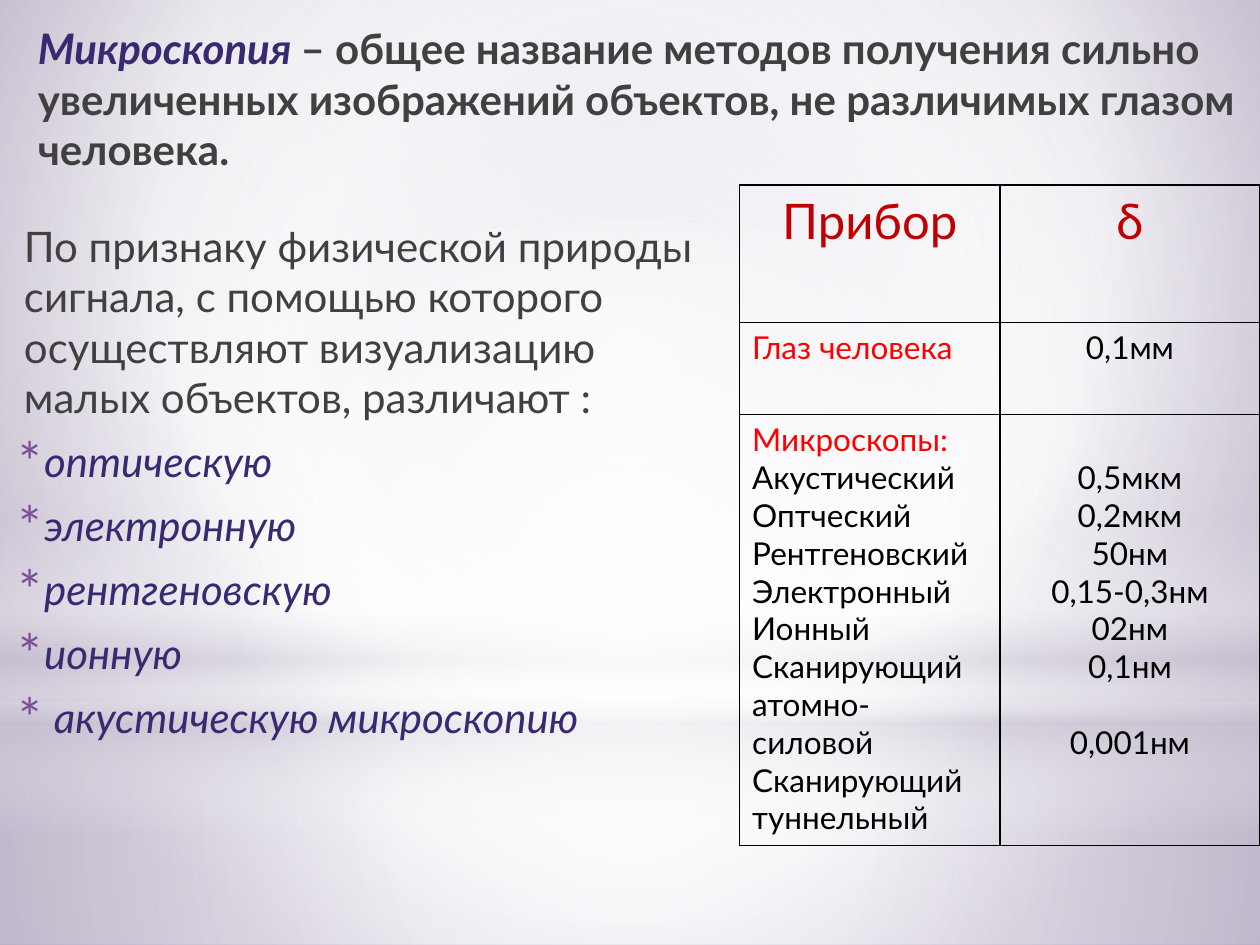
from dataclasses import dataclass

from lxml.etree import SubElement
from pptx import Presentation
from pptx.dml.color import RGBColor
from pptx.enum.shapes import MSO_SHAPE
from pptx.enum.text import MSO_ANCHOR, MSO_AUTO_SIZE, PP_ALIGN
from pptx.oxml.ns import qn
from pptx.util import Inches, Pt


@dataclass(frozen=True)
class Theme:
    """Colours, font and type sizes of the slide."""
    font: str = "Lato"
    text: str = "404040"
    accent: str = "382971"
    bullet: str = "7E4E99"
    header: str = "C00000"
    label: str = "FF0000"
    black: str = "000000"
    white: str = "FFFFFF"
    haze: str = "C9C2D1"
    edge: str = "C1B7CD"
    deep: str = "A191B5"
    main: int = 24
    head: int = 28
    cell: int = 18


T = Theme()
CENTRE = (50, 50, 50, 50)
INSTRUMENTS = ["Акустический", "Оптческий", "Рентгеновский", "Электронный", "Ионный",
               "Сканирующий атомно-силовой", "Сканирующий туннельный"]
LIMITS = ["0,5мкм", "0,2мкм", "50нм", "0,15-0,3нм", "02нм", "0,1нм", "0,001нм"]
KINDS = ["оптическую", "электронную", "рентгеновскую", "ионную", " акустическую микроскопию"]


def inches(box):
    """Turn a box of plain numbers into lengths."""
    return [Inches(v) for v in box]


def add_element(parent, tag, **attrs):
    """Append a drawing element with the given attributes."""
    return SubElement(parent, qn(tag), {k: str(v) for k, v in attrs.items()})


def set_gradient(props, stops, centre=None):
    """Replace a solid fill by a radial gradient, or a vertical one without a centre."""
    solid = props.find(qn("a:solidFill"))
    grad = props.makeelement(qn("a:gradFill"), {"rotWithShape": "1"})
    stop_list = add_element(grad, "a:gsLst")
    for pos, color, alpha in stops:
        gs = add_element(stop_list, "a:gs", pos=pos * 1000)
        clr = add_element(gs, "a:srgbClr", val=color)
        if alpha < 100:
            add_element(clr, "a:alpha", val=alpha * 1000)
    if centre:
        path = add_element(grad, "a:path", path="circle")
        add_element(path, "a:fillToRect",
                    **{side: v * 1000 for side, v in zip("ltrb", centre)})
    else:
        add_element(grad, "a:lin", ang=90 * 60000, scaled=0)
    props.replace(solid, grad)


def add_run(p, text, size, color, bold=False, italic=False):
    """Add one formatted run to a paragraph."""
    r = p.add_run()
    r.text = text
    r.font.name, r.font.size = T.font, Pt(size)
    r.font.bold, r.font.italic = bold, italic
    r.font.color.rgb = RGBColor.from_string(color)


def next_paragraph(tf, index):
    """Return the first paragraph for index zero, otherwise a new one."""
    return tf.add_paragraph() if index else tf.paragraphs[0]


def place_placeholder(sp, box):
    """Move a placeholder to its box, bring it forward and return its text frame."""
    sp.left, sp.top, sp.width, sp.height = inches(box)
    sp.element.getparent().append(sp.element)
    tf = sp.text_frame
    tf.word_wrap = True
    tf.auto_size = MSO_AUTO_SIZE.NONE
    tf.vertical_anchor = MSO_ANCHOR.TOP
    return tf


def add_glow(s, kind, box, stops, centre=None):
    """Add one borderless gradient shape."""
    sp = s.shapes.add_shape(kind, *inches(box))
    sp.shadow.inherit = False
    sp.line.fill.background()
    sp.fill.solid()
    set_gradient(sp.element.spPr, stops, centre)


def add_backdrop(s, box):
    """Paint the background and its layers of light."""
    left, top, width, height = box
    horizon = top + 5.58
    s.background.fill.solid()
    set_gradient(s.element.find(".//" + qn("p:bgPr")),
                 [(0, T.edge, 100), (60, T.white, 100), (100, T.deep, 100)],
                 (20, 10, 20, 60))
    add_glow(s, MSO_SHAPE.RECTANGLE, (left, horizon, width, top + height - horizon),
             [(0, T.white, 91), (37, T.white, 76), (100, T.haze, 79)], CENTRE)
    add_glow(s, MSO_SHAPE.RECTANGLE, (left, top, width, horizon - top),
             [(0, T.white, 89), (48, T.white, 62), (100, T.haze, 79)], CENTRE)
    add_glow(s, MSO_SHAPE.RECTANGLE, (left, top + 4.12, width, 2.5),
             [(0, T.white, 0), (29, T.white, 30), (45, T.haze, 40),
              (55, T.white, 26), (65, T.haze, 60), (100, T.white, 0)])
    add_glow(s, MSO_SHAPE.OVAL, (left, top + 1.75, width, 5.58),
             [(0, T.white, 100), (56, T.white, 0)], CENTRE)


def fill_title(s, box):
    """Write the definition in the title placeholder."""
    p = place_placeholder(s.shapes.title, box).paragraphs[0]
    p.alignment = PP_ALIGN.LEFT
    add_run(p, "Микроскопия ", T.main, T.accent, True, True)
    add_run(p, "– общее название методов получения сильно увеличенных изображений "
               "объектов, не различимых глазом человека.", T.main, T.text, True)


def format_item(p, margin, indent, bullet):
    """Set spacing, indents and the bullet of a body paragraph."""
    p.space_before, p.space_after = Pt(4.8), Pt(3)
    props = p._p.get_or_add_pPr()
    props.set("marL", str(Inches(margin)))
    props.set("indent", str(Inches(indent)))
    if not bullet:
        add_element(props, "a:buNone")
        return
    add_element(add_element(props, "a:buClr"), "a:srgbClr", val=T.bullet)
    add_element(props, "a:buSzPct", val=130000)
    add_element(props, "a:buFont", typeface=T.font)
    add_element(props, "a:buChar", char=bullet)


def fill_body(s, box):
    """Write the introduction and the list of kinds in the body placeholder."""
    tf = place_placeholder(s.placeholders[1], box)
    p = tf.paragraphs[0]
    format_item(p, 0.09, 0, None)
    add_run(p, "По признаку физической природы сигнала, с помощью которого осуществляют "
               "визуализацию малых объектов, различают :", T.main, T.text)
    for kind in KINDS:
        p = tf.add_paragraph()
        format_item(p, 0.25, -0.2, "*")
        add_run(p, kind, T.main, T.accent, italic=True)


def fill_cell(cell, lines, size, align):
    """Write coloured lines in a bordered, unfilled cell."""
    props = cell._tc.get_or_add_tcPr()
    for side in ("L", "R", "T", "B"):
        ln = add_element(props, "a:ln" + side, w=Pt(1))
        add_element(add_element(ln, "a:solidFill"), "a:srgbClr", val=T.black)
    cell.fill.background()
    for i, (text, color) in enumerate(lines):
        p = next_paragraph(cell.text_frame, i)
        p.alignment = align
        add_run(p, text, size, color)


def add_resolution_table(s, box):
    """Add the table of instruments and their resolution limits."""
    table = s.shapes.add_table(3, 2, *inches(box)).table
    table.first_row = table.horz_banding = False
    for col in table.columns:
        col.width = Inches(box[2] / 2)
    for row, height in zip(table.rows, (1.09, 0.73, 3.42)):
        row.height = Inches(height)
    names = [("Микроскопы:", T.label)] + [(name, T.black) for name in INSTRUMENTS]
    rows = [
        (T.head, PP_ALIGN.CENTER, [("Прибор", T.header)], [("δ", T.header)]),
        (T.cell, PP_ALIGN.LEFT, [("Глаз человека", T.label)], [("0,1мм", T.black)]),
        (T.cell, PP_ALIGN.LEFT, names, [(limit, T.black) for limit in LIMITS]),
    ]
    for i, (size, align, left, right) in enumerate(rows):
        fill_cell(table.cell(i, 0), left, size, align)
        fill_cell(table.cell(i, 1), right, size, PP_ALIGN.CENTER)
    limits = table.cell(2, 1)
    limits.margin_top = Inches(0.35)
    limits.text_frame.paragraphs[-1].space_before = Pt(1.2 * T.cell)


def main():
    """Build and save the slide."""
    prs = Presentation()
    prs.slide_width, prs.slide_height = Inches(10), Inches(7.5)
    s = prs.slides.add_slide(prs.slide_layouts[1])
    add_backdrop(s, (0, 0, 10, 7.5))
    fill_title(s, (0.2, 0.13, 9.8, 1.88))
    fill_body(s, (0, 1.7, 5.87, 5.25))
    add_resolution_table(s, (5.87, 1.47, 4.13, 5.24))
    prs.save("out.pptx")


if __name__ == "__main__":
    main()
